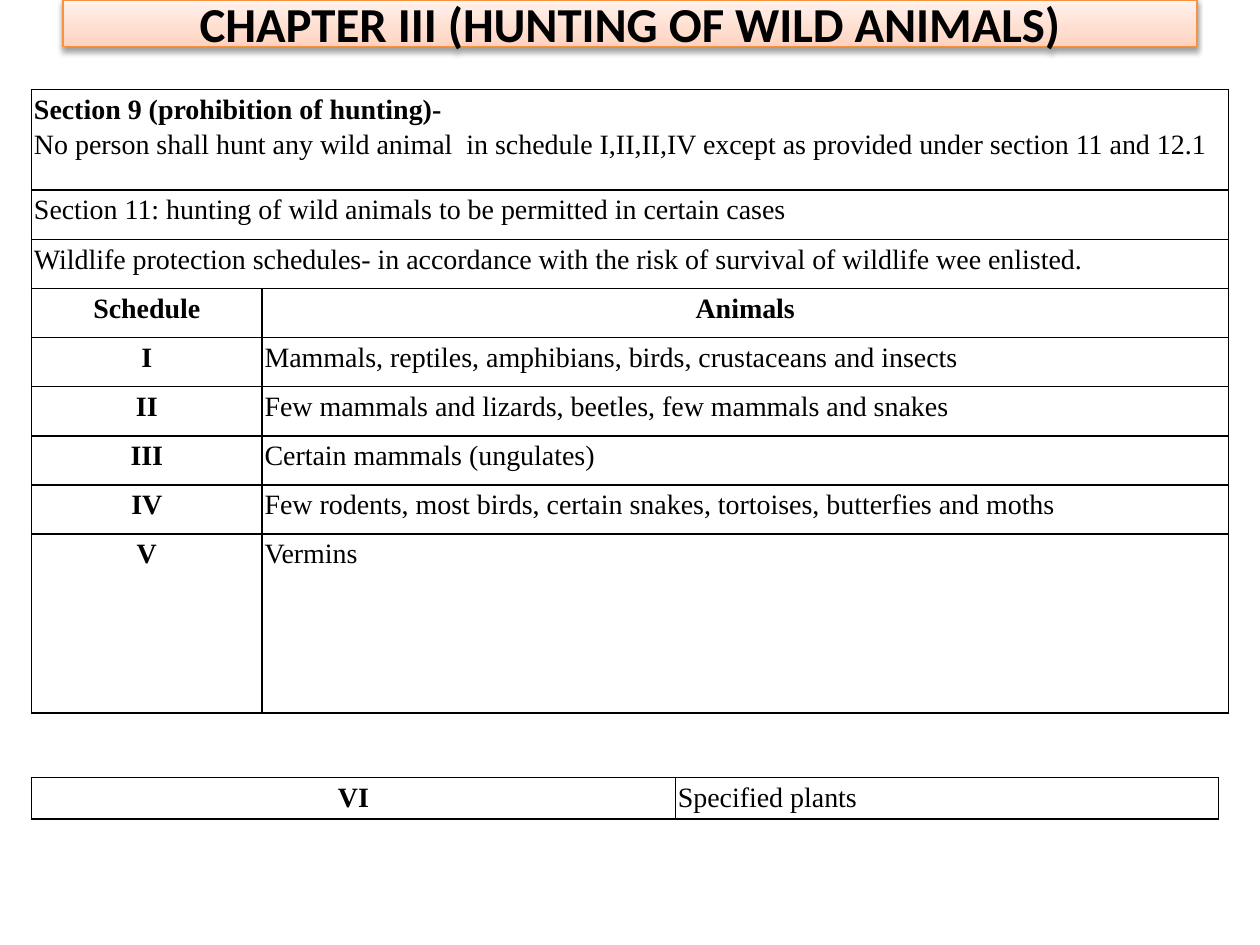
from copy import deepcopy

from lxml.etree import SubElement
from pptx import Presentation
from pptx.dml.color import RGBColor
from pptx.enum.shapes import MSO_SHAPE
from pptx.enum.text import MSO_ANCHOR, PP_ALIGN
from pptx.oxml.ns import qn
from pptx.util import Inches, Pt

COLORS = {
    "ink": "000000",
    "banner_edge": "F69240",
    "banner_dark": "FFD2BD",
    "banner_mid": "FFDED0",
    "banner_light": "FFF2ED",
}
LEFT = 0.25
ROW = 0.39

SECTIONS = [
    ["Section 9 (prohibition of hunting)-",
     "No person shall hunt any wild animal  in schedule I,II,II,IV "
     "except as provided under section 11 and 12.1"],
    ["Section 11: hunting of wild animals to be permitted in certain cases"],
    ["Wildlife protection schedules- in accordance with the risk of survival "
     "of wildlife wee enlisted."],
]
SCHEDULES = [
    ("I", "Mammals, reptiles, amphibians, birds, crustaceans and insects"),
    ("II", "Few mammals and lizards, beetles, few mammals and snakes"),
    ("III", "Certain mammals (ungulates)"),
    ("IV", "Few rodents, most birds, certain snakes, tortoises, butterfies and moths"),
    ("V", "Vermins"),
]


def color(name):
    return RGBColor.from_string(COLORS[name])


def style_paragraph(paragraph, font_name, size, bold, align):
    paragraph.alignment = align
    for run in paragraph.runs:
        run.font.name = font_name
        run.font.size = Pt(size)
        run.font.bold = bold
        run.font.color.rgb = color("ink")


def add_shadow(shape):
    effects = SubElement(shape._element.spPr, qn("a:effectLst"))
    shadow = SubElement(effects, qn("a:outerShdw"), blurRad=str(Pt(3.1)),
                        dist=str(Pt(1.6)), dir="5400000", rotWithShape="0")
    tint = SubElement(shadow, qn("a:srgbClr"), val=COLORS["ink"])
    SubElement(tint, qn("a:alpha"), val="38000")


def fill_gradient(shape, stops, angle):
    shape.fill.gradient()
    shape.fill.gradient_angle = angle
    stop_list = shape.fill._fill._gradFill.find(qn("a:gsLst"))
    while len(stop_list) < len(stops):
        stop_list.append(deepcopy(stop_list[-1]))
    for stop, (position, name) in zip(shape.fill.gradient_stops, stops):
        stop.position = position
        stop.color.rgb = color(name)


def add_banner(slide, title):
    banner = slide.shapes.add_shape(MSO_SHAPE.RECTANGLE, Inches(0.5), 0,
                                    Inches(9), Inches(0.37))
    fill_gradient(banner, [(0, "banner_dark"), (0.35, "banner_mid"),
                           (1, "banner_light")], 90)
    banner.line.color.rgb = color("banner_edge")
    banner.line.width = Pt(0.75)
    add_shadow(banner)
    frame = banner.text_frame
    frame.margin_top = frame.margin_bottom = 0
    frame.vertical_anchor = MSO_ANCHOR.MIDDLE
    frame.text = title
    style_paragraph(frame.paragraphs[0], "Calibri", 27.9, True, PP_ALIGN.CENTER)


def set_borders(cell):
    properties = cell._tc.get_or_add_tcPr()
    for index, side in enumerate(("lnL", "lnR", "lnT", "lnB")):
        edge = properties.makeelement(qn("a:" + side), {"w": str(Pt(1))})
        properties.insert(index, edge)
        SubElement(SubElement(edge, qn("a:solidFill")), qn("a:srgbClr"),
                   val=COLORS["ink"])


def write_cell(cell, lines, heading=False, bold_first=False):
    cell.margin_left = cell.margin_right = Inches(0.02)
    cell.margin_top = cell.margin_bottom = 0
    cell.text_frame.text = "\n".join(lines)
    align = PP_ALIGN.CENTER if heading else PP_ALIGN.JUSTIFY
    for index, paragraph in enumerate(cell.text_frame.paragraphs):
        bold = heading or (bold_first and index == 0)
        style_paragraph(paragraph, "Times New Roman", 16, bold, align)
        paragraph.line_spacing = 1.15


def add_grid(slide, top, columns, rows):
    table = slide.shapes.add_table(
        len(rows), len(columns), Inches(LEFT), Inches(top),
        Inches(sum(columns)), Inches(sum(rows))).table
    table.first_row = table.horz_banding = False
    for column, width in zip(table.columns, columns):
        column.width = Inches(width)
    for row, height in zip(table.rows, rows):
        row.height = Inches(height)
    for cell in table.iter_cells():
        cell.fill.background()
        set_borders(cell)
    return table


def write_schedule(table, row, schedule, animals, header=False):
    write_cell(table.cell(row, 0), [schedule], heading=True)
    write_cell(table.cell(row, 1), [animals], heading=header)


def main():
    deck = Presentation()
    deck.slide_width, deck.slide_height = Inches(10), Inches(7.5)
    slide = deck.slides.add_slide(deck.slide_layouts[6])

    add_banner(slide, "CHAPTER III (HUNTING OF WILD ANIMALS)")

    # Sections across the full width, then the schedules in two columns
    law = add_grid(slide, 0.71, [1.83, 7.67], [0.8] + [ROW] * 7 + [1.42])
    for row, lines in enumerate(SECTIONS):
        law.cell(row, 0).merge(law.cell(row, 1))
        write_cell(law.cell(row, 0), lines, bold_first=len(lines) > 1)
    header_row = len(SECTIONS)
    write_schedule(law, header_row, "Schedule", "Animals", header=True)
    for row, (schedule, animals) in enumerate(SCHEDULES, header_row + 1):
        write_schedule(law, row, schedule, animals)

    # Last schedule, on its own
    plants = add_grid(slide, 6.17, [5.11, 4.31], [0.33])
    write_schedule(plants, 0, "VI", "Specified plants")

    deck.save("out.pptx")


if __name__ == "__main__":
    main()
